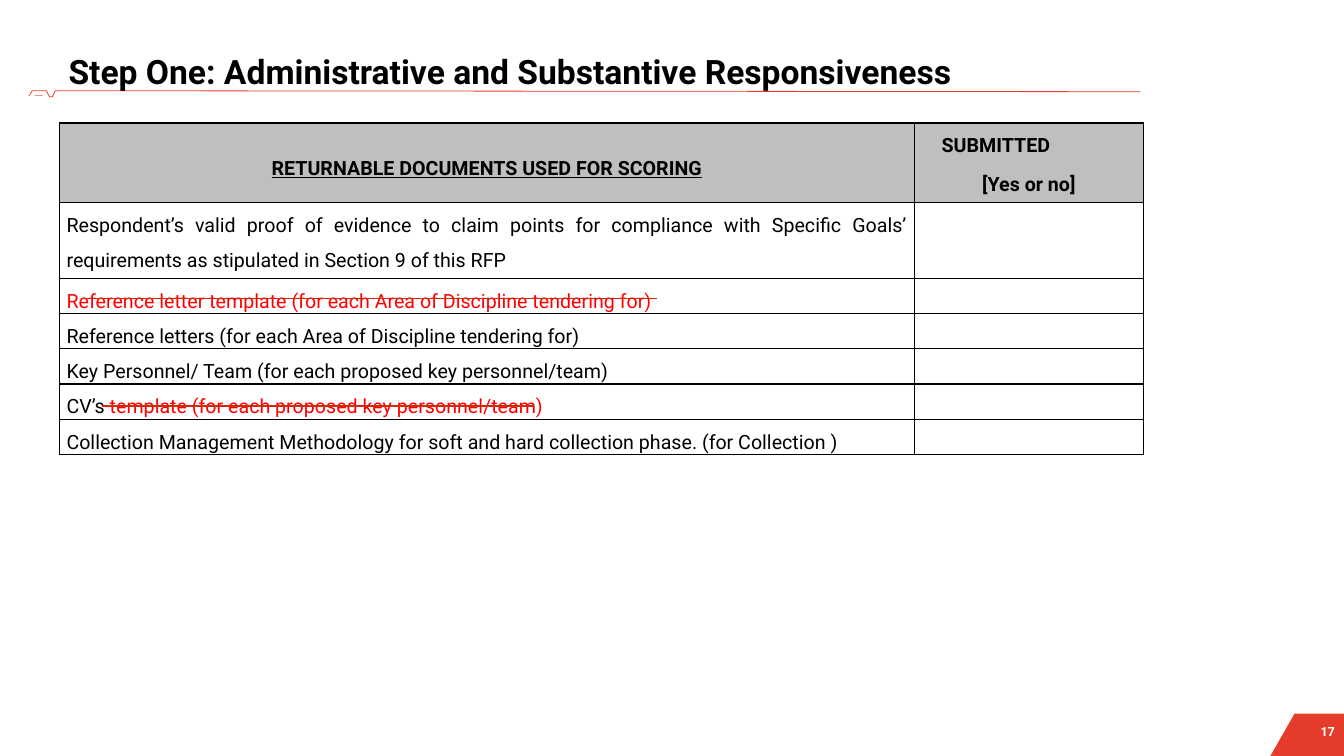
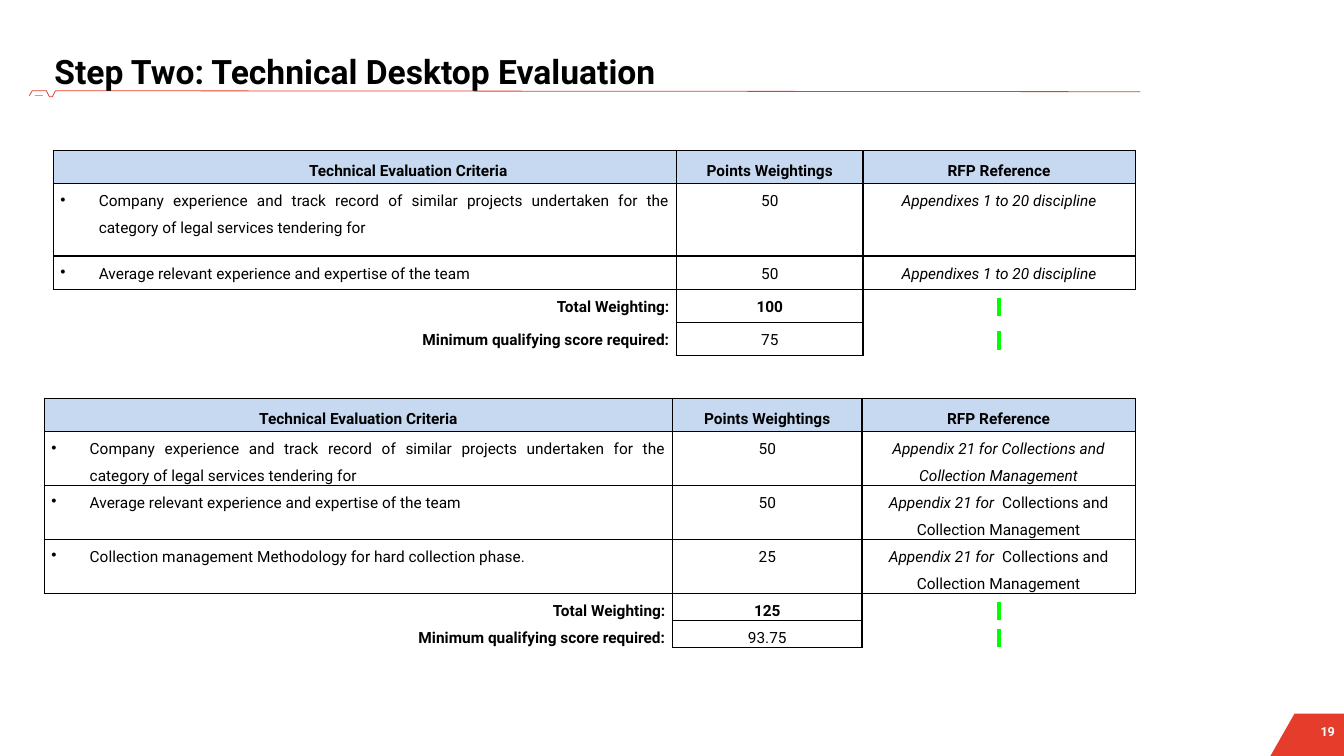
from dataclasses import dataclass

from lxml import etree
from pptx import Presentation
from pptx.dml.color import RGBColor
from pptx.enum.shapes import MSO_CONNECTOR, MSO_SHAPE
from pptx.enum.text import MSO_ANCHOR, PP_ALIGN
from pptx.oxml.ns import qn
from pptx.util import Inches, Pt

LEFT, CENTER, RIGHT, JUSTIFY = PP_ALIGN.LEFT, PP_ALIGN.CENTER, PP_ALIGN.RIGHT, PP_ALIGN.JUSTIFY
TOP, MIDDLE, BOTTOM = MSO_ANCHOR.TOP, MSO_ANCHOR.MIDDLE, MSO_ANCHOR.BOTTOM
STRAIGHT, RECTANGLE = MSO_CONNECTOR.STRAIGHT, MSO_SHAPE.RECTANGLE


@dataclass(frozen=True)
class Theme:
    font: str = "Roboto"
    black: RGBColor = RGBColor(0, 0, 0)
    white: RGBColor = RGBColor(255, 255, 255)
    accent: RGBColor = RGBColor.from_string("E63C2B")
    strike: RGBColor = RGBColor.from_string("D32A0D")
    deleted: RGBColor = RGBColor.from_string("FF0000")
    grey: RGBColor = RGBColor.from_string("BFBFBF")
    blue: RGBColor = RGBColor.from_string("C6D9F1")
    marker: str = "00FF00"
    title_size: int = Pt(24)
    document_size: int = Pt(14)
    criteria_size: int = Pt(11)
    number_size: int = Pt(9)
    border: int = Pt(1)


THEME = Theme()


def write(paragraph, text, size, color=THEME.black, bold=False, italic=False, underline=False,
          align=LEFT, spacing=None, indent=0, bullet=False, highlight=False):
    props = paragraph._p.get_or_add_pPr()
    if indent:
        props.set("marL", str(Inches(indent)))
        props.set("indent", str(Inches(-indent if bullet else 0)))
    if bullet:
        etree.SubElement(props, qn("a:buChar"), char="•")
    paragraph.alignment = align
    paragraph.line_spacing = spacing
    run = paragraph.add_run()
    run.text = text
    font = run.font
    font.color.rgb = color
    if highlight:
        mark = etree.Element(qn("a:highlight"))
        etree.SubElement(mark, qn("a:srgbClr"), val=THEME.marker)
        run._r.get_or_add_rPr().insert(1, mark)
    font.name, font.size = THEME.font, size
    font.bold, font.italic, font.underline = bold, italic, underline


def style_cell(cell, sides="LRTB", fill=None, anchor=TOP):
    cell.margin_left = cell.margin_right = Inches(0.07)
    cell.margin_top = cell.margin_bottom = 0
    cell.vertical_anchor = anchor
    props = cell._tc.get_or_add_tcPr()
    for position, side in enumerate("LRTB"):
        edge = etree.Element(qn(f"a:ln{side}"), w=str(THEME.border))
        if side in sides:
            paint = etree.SubElement(edge, qn("a:solidFill"))
            etree.SubElement(paint, qn("a:srgbClr"), val=str(THEME.black))
        else:
            etree.SubElement(edge, qn("a:noFill"))
        props.insert(position, edge)
    if fill is None:
        cell.fill.background()
    else:
        cell.fill.solid()
        cell.fill.fore_color.rgb = fill


prs = Presentation()
prs.slide_width, prs.slide_height = Inches(13.33), Inches(7.5)
title_only = prs.slide_layouts[5]

corner = [(12.84, 7.08), (13.33, 7.08), (13.33, 7.5), (12.6, 7.5)]
rule = [
    (11.31, 0.91), (0.55, 0.9), (0.52, 0.96), (0.49, 0.96), (0.46, 0.9), (0.32, 0.9), (0.23, 1.05),
    (0.23, 1.15), (0.29, 1.24), (0.38, 1.24), (0.39, 1.22), (0.51, 1.22), (0.52, 1.25), (0.52, 1.32),
    (0.55, 1.36), (0.55, 1.41), (0.59, 1.49), (0.59, 1.55), (0.64, 1.61), (0.7, 1.61), (0.73, 1.56),
    (0.73, 1.52), (0.81, 1.41), (0.81, 1.33), (0.84, 1.28), (0.88, 1.28), (0.95, 1.16), (0.82, 1.16),
    (0.79, 1.1), (0.79, 1.04), (0.73, 0.96), (0.59, 0.96), (0.55, 1.02), (0.46, 1.02), (0.42, 0.95),
    (0.35, 0.95), (0.28, 1.07), (0.28, 1.13), (0.32, 1.19), (0.35, 1.19), (0.36, 1.17), (0.54, 1.17),
]
rule_covers = [(0.55, 0.94, 0.47), (0.42, 1, 0.47), (0.08, 0.95, 0.4)]

slides = []
for heading, number, heading_left in [
    ("Step One: Administrative and Substantive Responsiveness", "17", 0.58),
    ("Step Two: Technical Desktop Evaluation", "19", 0.44),
]:
    slide = prs.slides.add_slide(title_only)
    slides.append(slide)
    for points, closed in [(corner, True), (rule, False)]:
        outline = [(Inches(x), Inches(y)) for x, y in points]
        builder = slide.shapes.build_freeform(*outline[0])
        builder.add_line_segments(outline[1:], close=closed)
        band = builder.convert_to_shape()
        band.shadow.inherit = False
        if closed:
            band.fill.solid()
            band.fill.fore_color.rgb = THEME.accent
            band.line.fill.background()
        else:
            band.fill.background()
            band.line.color.rgb = THEME.accent
            band.line.width = Pt(0.56)
    for left, top, width in rule_covers:
        cover = slide.shapes.add_shape(RECTANGLE, Inches(left), Inches(top), Inches(width), Inches(0.79))
        cover.shadow.inherit = False
        cover.fill.solid()
        cover.fill.fore_color.rgb = THEME.white
        cover.line.fill.background()

    page = slide.shapes.add_textbox(Inches(12.67), Inches(7.15), Inches(0.57), Inches(0.23)).text_frame
    page.word_wrap = True
    page.vertical_anchor = BOTTOM
    page.margin_left = page.margin_right = page.margin_top = 0
    page.margin_bottom = Inches(0.05)
    write(page.paragraphs[0], number, THEME.number_size, color=THEME.white, bold=True, align=RIGHT)

    title = slide.shapes.title
    title.left, title.top = Inches(heading_left), Inches(0.45)
    title.width, title.height = Inches(11.1), Inches(0.5)
    title.text_frame.vertical_anchor = MIDDLE
    write(title.text_frame.paragraphs[0], heading, THEME.title_size, bold=True)
    slide.shapes.element.append(title.element)

step_one, step_two = slides

deleted = {"color": THEME.deleted}
documents = [
    [("Respondent’s valid proof of evidence to claim points for compliance with Specific Goals’ "
      "requirements as stipulated in Section 9 of this RFP", {})],
    [("Reference letter template (for each Area of Discipline tendering for)", deleted)],
    [("Reference letters (for each Area of Discipline tendering for)", {})],
    [("Key Personnel/ Team (for each proposed key personnel/team)", {})],
    [("CV’s", {}), (" template (for each proposed key personnel/team)", deleted)],
    [("Collection Management Methodology for soft and hard collection phase. (for Collection )", {})],
]
document_heights = [0.79, 0.75] + [0.35] * 5
checklist = step_one.shapes.add_table(
    len(document_heights), 2, Inches(0.59), Inches(1.22), Inches(10.75), Inches(sum(document_heights))
).table
checklist.first_row = checklist.horz_banding = False
checklist.columns[0].width, checklist.columns[1].width = Inches(8.48), Inches(2.27)
for row, height in zip(checklist.rows, document_heights):
    row.height = Inches(height)
for index, row in enumerate(checklist.rows):
    for column, cell in enumerate(row.cells):
        header = index == 0
        style_cell(cell, fill=THEME.grey if header else None,
                   anchor=MIDDLE if header and column == 0 else TOP)

document_header, submitted_header = (cell.text_frame for cell in checklist.rows[0].cells)
header_format = {"size": THEME.document_size, "bold": True, "spacing": 1.5}
write(document_header.paragraphs[0], "RETURNABLE DOCUMENTS USED FOR SCORING",
      underline=True, align=CENTER, **header_format)
write(submitted_header.paragraphs[0], "SUBMITTED", indent=0.2, **header_format)
answer = submitted_header.add_paragraph()
write(answer, "[Yes or no]", align=CENTER, **header_format)
answer.space_before = Pt(3)

for index, runs in enumerate(documents, 1):
    paragraph = checklist.cell(index, 0).text_frame.paragraphs[0]
    for text, extra in runs:
        write(paragraph, text, THEME.document_size, align=JUSTIFY, spacing=1.5, **extra)

for start, end, y, weight in [(0.8, 6.52, 2.96, 0.75), (1.01, 5.3, 4.03, 1.25)]:
    strike = step_one.shapes.add_connector(STRAIGHT, Inches(start), Inches(y), Inches(end), Inches(y))
    strike.line.color.rgb = THEME.strike
    strike.line.width = Pt(weight)
    etree.SubElement(strike.element.spPr, qn("a:effectLst"))

experience = ("Company experience and track record of similar projects undertaken for the "
              "category of legal services tendering for")
expertise = "Average relevant experience and expertise of the team"
methodology = "Collection management Methodology for hard collection phase."
italic = {"italic": True}
disciplines = [("Appendixes 1 to 20 discipline", italic)]
collections = [("Appendix 21 for ", italic), (" Collections and Collection Management", {})]
evaluations = [
    {"left": 0.53, "top": 1.49, "height": 2.06, "widths": [6.18, 1.85, 2.7],
     "row_heights": [0.33, 0.72] + [0.33] * 3, "header_indent": 0.86, "total": "100", "minimum": "75",
     "criteria": [(experience, "50", disciplines), (expertise, "50", disciplines)]},
    {"left": 0.44, "top": 3.95, "height": 2.34, "widths": [6.23, 1.88, 2.71],
     "row_heights": [0.33] + [0] * 5, "header_indent": 0, "total": "125", "minimum": "93.75",
     "criteria": [
         (experience, "50", [("Appendix 21 for Collections and Collection Management", italic)]),
         (expertise, "50", collections),
         (methodology, "25", collections)]},
]

bulleted = {"align": JUSTIFY, "indent": 0.38, "bullet": True}
centered = {"align": CENTER}
bold_centered = {"align": CENTER, "bold": True}
bold_right = {"align": RIGHT, "bold": True}
marker = [(" ", {"align": CENTER, "highlight": True})]
for evaluation in evaluations:
    widths, height = evaluation["widths"], Inches(evaluation["height"])
    rows = [[
        [("Technical Evaluation Criteria", {**bold_centered, "indent": evaluation["header_indent"]})],
        [("Points Weightings", bold_centered)],
        [("RFP Reference", bold_centered)],
    ]]
    for criterion, points, reference in evaluation["criteria"]:
        rows.append([
            [(criterion, bulleted)],
            [(points, centered)],
            [(text, {**centered, **extra}) for text, extra in reference],
        ])
    total_row = len(rows)
    rows.append([[("Total Weighting:", bold_right)], [(evaluation["total"], bold_centered)], marker])
    rows.append([[("Minimum qualifying score required:", bold_right)],
                 [(evaluation["minimum"], centered)], marker])

    frame = step_two.shapes.add_table(
        len(rows), len(widths), Inches(evaluation["left"]), Inches(evaluation["top"]),
        Inches(sum(widths)), height
    )
    scoring = frame.table
    scoring.first_row = scoring.horz_banding = False
    for column, width in zip(scoring.columns, widths):
        column.width = Inches(width)
    for index, (cells, row_height) in enumerate(zip(rows, evaluation["row_heights"])):
        scoring.rows[index].height = Inches(row_height)
        header = index == 0
        for column, runs in enumerate(cells):
            sides = "LRTB"
            if index >= total_row and column != 1:
                sides = ("R" if column == 0 else "L") + ("T" if index == total_row else "")
            cell = scoring.cell(index, column)
            style_cell(cell, sides, THEME.blue if header else None, MIDDLE if header else TOP)
            for text, extra in runs:
                write(cell.text_frame.paragraphs[0], text, THEME.criteria_size, spacing=1.5, **extra)
    frame.height = height

prs.save("out.pptx")
